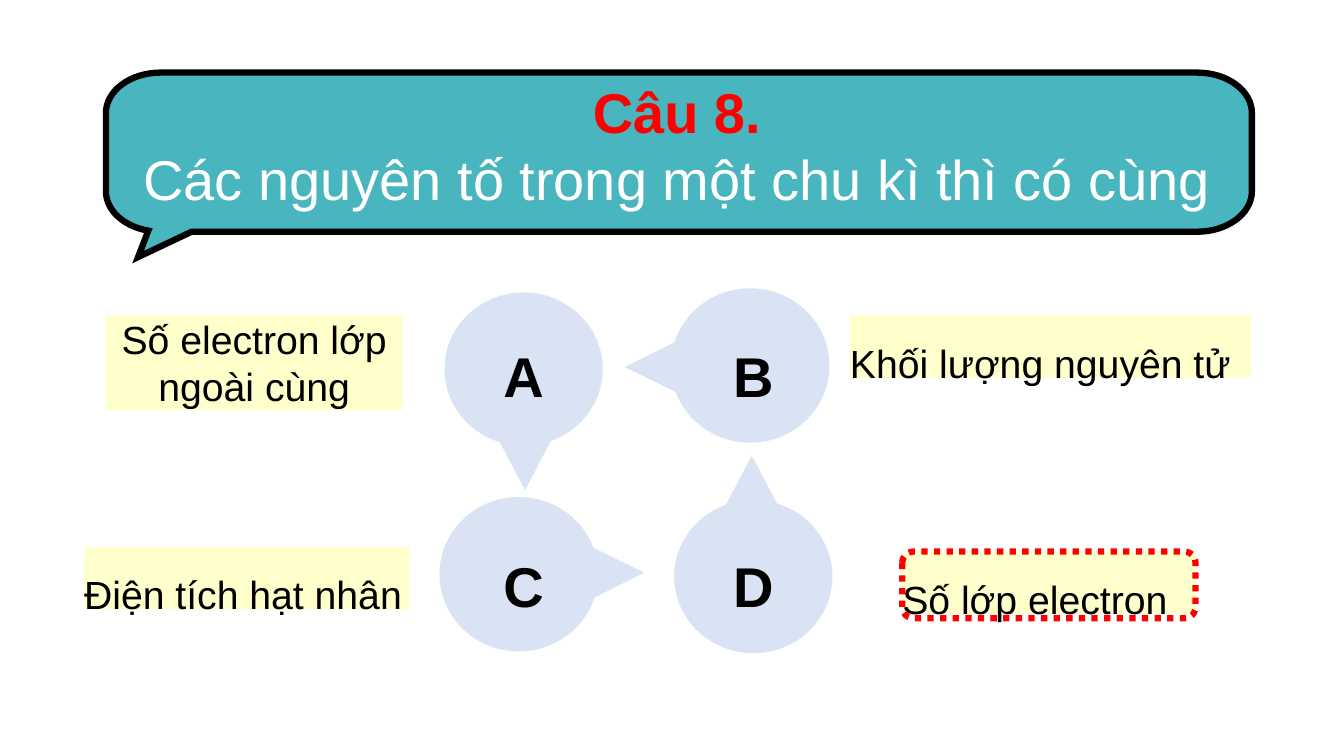
from itertools import pairwise
from math import cos, radians, sin, tan

from lxml.etree import SubElement
from pptx import Presentation
from pptx.dml.color import RGBColor
from pptx.enum.dml import MSO_LINE
from pptx.enum.shapes import MSO_SHAPE
from pptx.enum.text import MSO_ANCHOR, MSO_AUTO_SIZE, PP_ALIGN
from pptx.oxml.ns import qn
from pptx.util import Cm, Pt

COLOURS = {name: RGBColor.from_string(value) for name, value in {
    "bubble": "DAE3F3", "answer": "FFFFCC", "banner": "48B5BF",
    "red": "FF0000", "black": "000000", "white": "FFFFFF"}.items()}


def arc_curve(x, y, radius_x, radius_y, start, end):
    """Two control points and the end point of an elliptical arc, angles in degrees."""
    start, end = radians(start), radians(end)
    reach = 4 / 3 * tan((end - start) / 4)
    units = [(cos(start) - reach * sin(start), sin(start) + reach * cos(start)),
             (cos(end) + reach * sin(end), sin(end) - reach * cos(end)),
             (cos(end), sin(end))]
    return [(x + radius_x * across, y + radius_y * down) for across, down in units]


def style_paragraph(paragraph, size, colour, bold=False, align=PP_ALIGN.CENTER):
    paragraph.alignment = align
    for run in paragraph.runs:
        run.font.name = "Arial"
        run.font.size = Pt(size)
        run.font.bold = bold
        run.font.color.rgb = COLOURS[colour]


presentation = Presentation()
presentation.slide_width, presentation.slide_height = Cm(33.87), Cm(19.05)
slide = presentation.slides.add_slide(presentation.slide_layouts[5])
shapes = slide.shapes

# Each outline is a list of steps in cm: one point for a line, three for a curve.
# A bubble points up and is then turned.
outlines = []
for x, y, width, height, turn in [(11.2, 7.37, 3.99, 4.98, 180),
                                  (16.38, 6.63, 3.89, 5.16, 270),
                                  (11.71, 11.89, 3.89, 5.16, 90),
                                  (16.99, 11.48, 3.99, 4.98, 0)]:
    radius_x, radius_y = width / 2, 0.3875 * height
    centre_x, centre_y = x + radius_x, y + height - radius_y
    base = radians(-72.5)
    steps = [[(x + 0.49 * width, y)],
             [(centre_x + radius_x * cos(base), centre_y + radius_y * sin(base))]]
    steps += [arc_curve(centre_x, centre_y, radius_x, radius_y, start, end)
              for start, end in pairwise([-72.5, 0, 90, 180, 250])]
    outlines.append(("bubble", steps, turn))

left, top, right, bottom = 2.67, 1.83, 31.55, 5.84
corner_x, corner_y = 1.38, 1.02
inner_left, inner_right = left + corner_x, right - corner_x
inner_top, inner_bottom = top + corner_y, bottom - corner_y
banner_steps = [
    [(3.48, 6.48)], [(4.83, bottom)],
    [(inner_right, bottom)], arc_curve(inner_right, inner_bottom, corner_x, corner_y, 90, 0),
    [(right, inner_top)], arc_curve(inner_right, inner_top, corner_x, corner_y, 0, -90),
    [(inner_left, top)], arc_curve(inner_left, inner_top, corner_x, corner_y, -90, -180),
    [(left, inner_bottom)], arc_curve(inner_left, inner_bottom, corner_x, corner_y, 180, 103),
]
outlines.append(("banner", banner_steps, 0))

for colour, steps, turn in outlines:
    points = [(Cm(x), Cm(y)) for step in steps for x, y in step]
    builder = shapes.build_freeform(*points[0], scale=1.0)
    builder.add_line_segments(points[1:], close=True)
    shape = builder.convert_to_shape()
    lines = iter(list(shape._element.iter(qn("a:lnTo"))))
    for step in steps[1:]:
        segment = next(lines)
        if len(step) == 3:
            segment.tag = qn("a:cubicBezTo")
            for extra in (next(lines), next(lines)):
                segment.append(extra[0])
                extra.getparent().remove(extra)
    shape.rotation = turn
    shape.shadow.inherit = False
    shape.fill.solid()
    shape.fill.fore_color.rgb = COLOURS[colour]
    if colour == "banner":
        shape.line.color.rgb = COLOURS["black"]
        shape.line.width = Pt(4.5)
        SubElement(shape._element.spPr.find(qn("a:ln")), qn("a:miter"), lim="800000")
    else:
        shape.line.fill.background()

# Question, brought in front of the banner
title = shapes.title
title.left, title.top, title.width, title.height = Cm(3.15), Cm(1.83), Cm(27.81), Cm(8.51)
title_frame = title.text_frame
title_frame.text = "Câu 8.\nCác nguyên tố trong một chu kì thì có cùng"
title_frame.vertical_anchor = MSO_ANCHOR.TOP
title_frame.auto_size = MSO_AUTO_SIZE.NONE
style_paragraph(title_frame.paragraphs[0], 40, "red", bold=True)
style_paragraph(title_frame.paragraphs[1], 40, "white")
shapes._spTree.append(title._element)

# Letters and answers: text, left, top, width, height
labels = [("ABCD"[row * 2 + column], 12.37 + 5.79 * column, 8.61 + 5.28 * row, 1.65, 1.7)
          for row in range(2) for column in range(2)]
labels += [
    ("Số electron lớp ngoài cùng", 2.67, 7.95, 7.47, 2.39),
    ("Khối lượng nguyên tử", 21.42, 7.95, 10.11, 1.57),
    ("Điện tích hạt nhân", 2.12, 13.79, 8.2, 1.57),
    ("Số lớp electron", 22.74, 13.9, 7.39, 1.57),
]
for text, *box in labels:
    is_letter = len(text) == 1
    two_lines = box[3] > 2
    label = shapes.add_textbox(*[Cm(length) for length in box])
    label.fill.solid()
    label.fill.fore_color.rgb = COLOURS["bubble" if is_letter else "answer"]
    frame = label.text_frame
    frame.word_wrap = True
    frame.margin_left = frame.margin_right = frame.margin_top = frame.margin_bottom = 0
    frame.text = text
    paragraph = frame.paragraphs[0]
    if is_letter:
        style_paragraph(paragraph, 40, "black", bold=True)
    elif two_lines:
        style_paragraph(paragraph, 28, "black")
    else:
        style_paragraph(paragraph, 28, "black", align=PP_ALIGN.LEFT)
        paragraph.line_spacing = 1.5

# Dotted frame around the right answer
answer_frame = shapes.add_shape(MSO_SHAPE.ROUNDED_RECTANGLE,
                                Cm(22.74), Cm(13.9), Cm(7.39), Cm(1.68))
answer_frame.shadow.inherit = False
answer_frame.fill.background()
answer_frame.line.color.rgb = COLOURS["red"]
answer_frame.line.width = Pt(4.5)
answer_frame.line.dash_style = MSO_LINE.ROUND_DOT

presentation.save("out.pptx")
